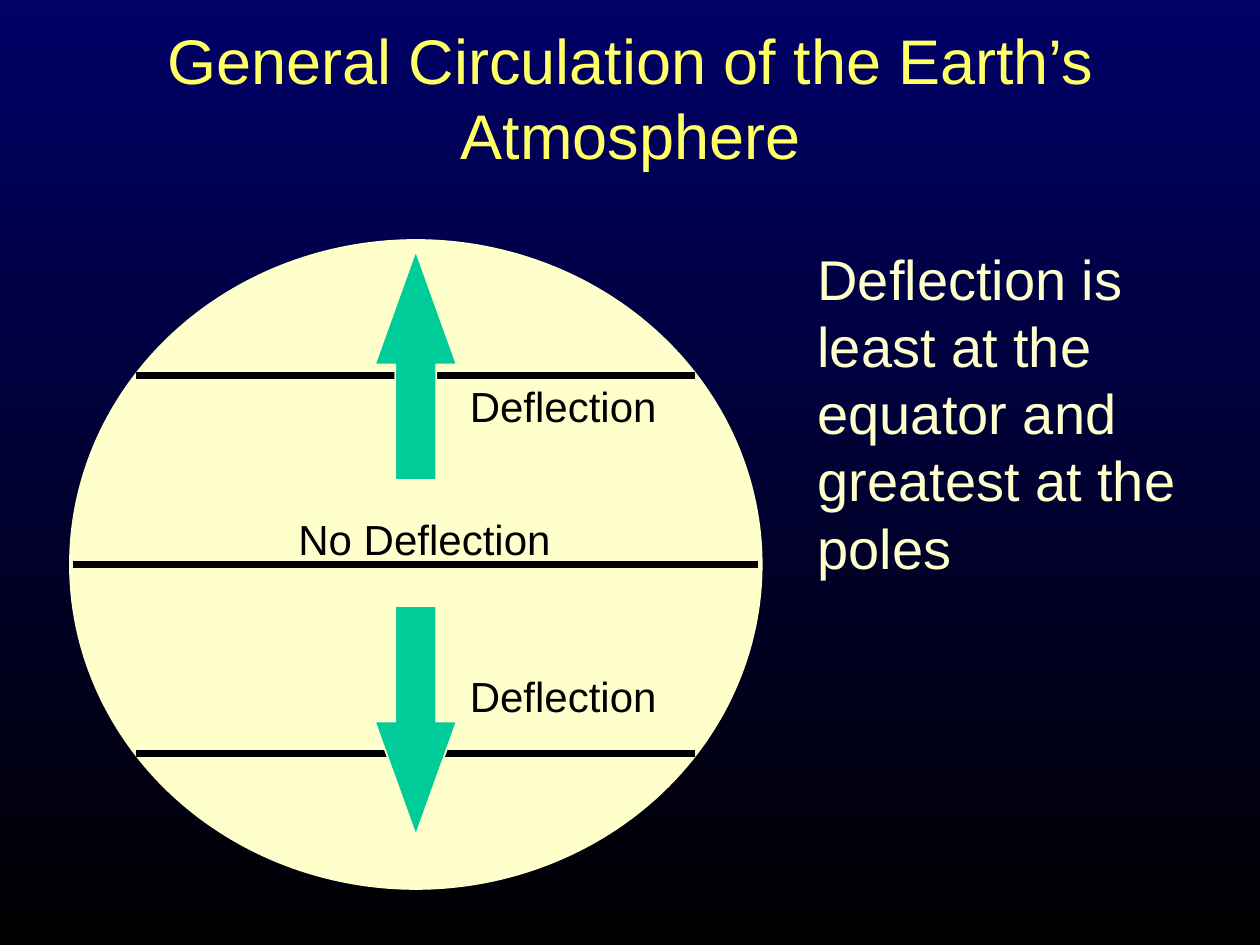
from lxml import etree
from pptx import Presentation
from pptx.dml.color import RGBColor
from pptx.enum.shapes import MSO_CONNECTOR, MSO_SHAPE
from pptx.enum.text import MSO_ANCHOR, MSO_AUTO_SIZE, PP_ALIGN
from pptx.oxml.ns import qn
from pptx.util import Inches, Pt

OVAL, ARROW = MSO_SHAPE.OVAL, MSO_SHAPE.RIGHT_ARROW
STRAIGHT = MSO_CONNECTOR.STRAIGHT
LEFT, CENTER = PP_ALIGN.LEFT, PP_ALIGN.CENTER

# Content
TITLE = "General Circulation of the Earth’s Atmosphere"
NOTE = "Deflection is least at the equator and greatest at the poles"
LABELS = [  # text, left, top, width
    ("No Deflection", 2.27, 4.03, 2.2),
    ("Deflection", 3.63, 2.97, 1.68),
    ("Deflection", 3.63, 5.27, 1.68),
]
COLORS = {"sky_top": "000066", "sky_bottom": "000000", "title": "FFFF66",
          "cream": "FFFFCC", "arrow": "00CC99", "ink": "000000"}
FONT = "Arial"

# Globe geometry
CENTER_X, EQUATOR_Y = 3.3, 4.48
GLOBE_WIDTH, GLOBE_HEIGHT = 5.49, 5.15
LATITUDES = [(0, 2.72), (-1.5, 2.22), (1.5, 2.22)]  # offset, half length
ARROW_LENGTH, ARROW_WIDTH = 1.82, 0.65
ARROWS = [(2.9, 270), (5.72, 90)]  # centre height, rotation


def color(name):
    return RGBColor.from_string(COLORS[name])


def write(shape, text, size, color_name, align=LEFT, wrap=True):
    frame = shape.text_frame
    frame.word_wrap = wrap
    frame.text = text
    paragraph = frame.paragraphs[0]
    paragraph.alignment = align
    font_format = {"name": FONT, "size": Pt(size), "bold": False}
    for name, value in font_format.items():
        setattr(paragraph.runs[0].font, name, value)
    paragraph.runs[0].font.color.rgb = color(color_name)
    return frame


def add_centered(slide, kind, middle_y, width, height, fill):
    shape = slide.shapes.add_shape(
        kind, Inches(CENTER_X - width / 2), Inches(middle_y - height / 2),
        Inches(width), Inches(height))
    shape.shadow.inherit = False
    shape.fill.solid()
    shape.fill.fore_color.rgb = color(fill)
    shape.line.color.rgb = color("cream")
    shape.line.width = Pt(1)
    return shape


def add_latitude(slide, offset, half_length):
    y = Inches(EQUATOR_Y + offset)
    line = slide.shapes.add_connector(
        STRAIGHT, Inches(CENTER_X - half_length), y,
        Inches(CENTER_X + half_length), y)
    line.line.color.rgb = color("ink")
    line.line.width = Pt(4)
    etree.SubElement(line._element.spPr, qn("a:effectLst"))


def add_arrow(slide, middle_y, rotation):
    arrow = add_centered(slide, ARROW, middle_y, ARROW_LENGTH, ARROW_WIDTH, "arrow")
    arrow.rotation = rotation
    arrow.adjustments[0] = 0.5
    arrow.adjustments[1] = 1.39


def add_text(slide, text, box, size, color_name, wrap):
    textbox = slide.shapes.add_textbox(*map(Inches, box))
    frame = write(textbox, text, size, color_name, wrap=wrap)
    frame.auto_size = MSO_AUTO_SIZE.SHAPE_TO_FIT_TEXT


def main():
    presentation = Presentation()
    presentation.slide_width, presentation.slide_height = Inches(10), Inches(7.5)
    slide = presentation.slides.add_slide(presentation.slide_layouts[0])
    subtitle = slide.placeholders[1]._element
    subtitle.getparent().remove(subtitle)

    # Background, dark blue down to black
    background = slide.background.fill
    background.gradient()
    background.gradient_angle = 270
    for stop, name in zip(background.gradient_stops, ("sky_top", "sky_bottom")):
        stop.color.rgb = color(name)

    # Title
    title = slide.shapes.title
    title.left, title.top, title.width, title.height = map(
        Inches, (0.17, 0.17, 9.67, 1.25))
    frame = write(title, TITLE, 36, "title", CENTER)
    frame.vertical_anchor = MSO_ANCHOR.BOTTOM
    frame.auto_size = MSO_AUTO_SIZE.NONE

    # Globe with its latitudes, arrows and labels
    add_centered(slide, OVAL, EQUATOR_Y, GLOBE_WIDTH, GLOBE_HEIGHT, "cream")
    for offset, half_length in LATITUDES:
        add_latitude(slide, offset, half_length)
    for middle_y, rotation in ARROWS:
        add_arrow(slide, middle_y, rotation)
    for text, left, top, width in LABELS:
        add_text(slide, text, (left, top, width, 0.5), 24, "ink", False)

    # Side note
    add_text(slide, NOTE, (6.39, 1.89, 3.28, 2.76), 32, "cream", True)

    presentation.save("out.pptx")


if __name__ == "__main__":
    main()
